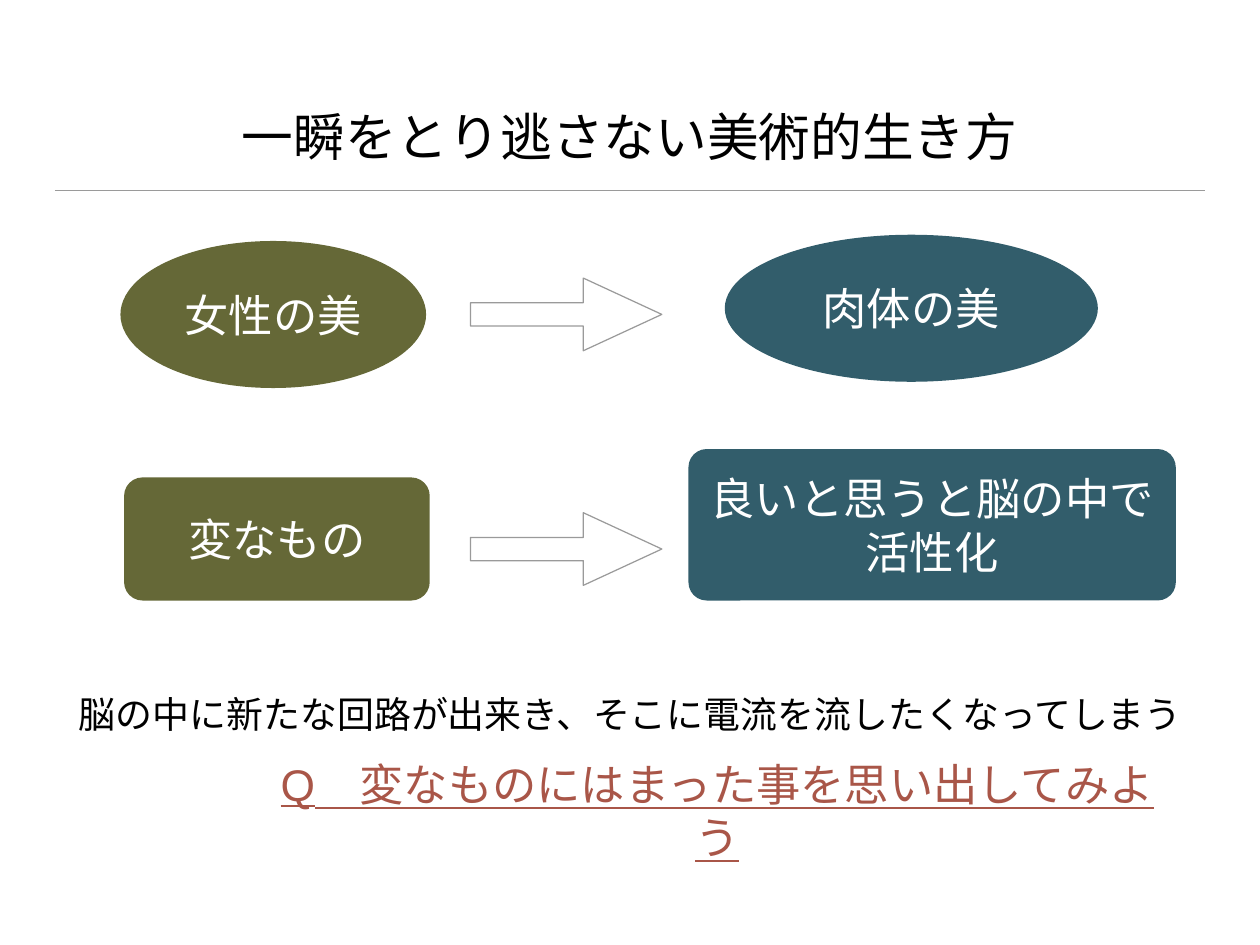
"""Draw the slide on an art-minded way of living, with places in percent of its size."""
from dataclasses import dataclass

from lxml.etree import SubElement
from pptx import Presentation
from pptx.dml.color import RGBColor as Color
from pptx.enum.shapes import MSO_CONNECTOR as Link, MSO_SHAPE as Kind
from pptx.enum.text import MSO_ANCHOR as Anchor, PP_ALIGN as Align
from pptx.oxml.ns import qn
from pptx.util import Inches, Pt

WIDE, HIGH = Inches(14.22), Inches(10.67)


@dataclass(frozen=True)
class Theme:
    font: str = "Arial"
    ink: str = "000000"
    pale: str = "FFFFFF"
    rule: str = "9A9A9A"
    olive: str = "656837"
    teal: str = "325D6B"
    brick: str = "A95648"
    title: int = 42
    large: int = 36
    note: int = 30
    line: int = 1
    inset: float = 0.06


@dataclass(frozen=True)
class Box:
    left: float
    top: float
    width: float
    height: float

    def place(self) -> tuple[int, int, int, int]:
        return (across(self.left), down(self.top),
                across(self.width), down(self.height))


@dataclass(frozen=True)
class Node:
    text: str
    kind: Kind
    box: Box
    fill: str
    round: float | None = None


@dataclass(frozen=True)
class Note:
    text: str
    box: Box
    size: int
    color: str
    anchor: Anchor = Anchor.MIDDLE
    inset: float = 0.06
    wrap: bool = True
    under: bool = False


THEME = Theme()

NODES = (
    Node("女性の美", Kind.OVAL, Box(9.56, 25.5, 24.26, 15.56), THEME.olive),
    Node("肉体の美", Kind.OVAL, Box(57.52, 24.84, 29.61, 15.56), THEME.teal),
    Node("変なもの", Kind.ROUNDED_RECTANGLE,
         Box(9.85, 50.52, 24.26, 13.03), THEME.olive, 0.15),
    Node("良いと思うと脳の中で活性化", Kind.ROUNDED_RECTANGLE,
         Box(54.64, 47.52, 38.68, 16.03), THEME.teal, 0.12),
)

NOTES = (
    Note("一瞬をとり逃さない美術的生き方", Box(4.36, 3.37, 91.21, 14.34),
         THEME.title, THEME.ink, anchor=Anchor.BOTTOM, inset=0),
    Note("脳の中に新たな回路が出来き、そこに電流を流したくなってしまう",
         Box(5.7, 73.01, 88.68, 4.97), THEME.note, THEME.ink, wrap=False),
    Note("Q　変なものにはまった事を思い出してみよう",
         Box(20.11, 82.38, 73.63, 6.75), THEME.large, THEME.brick, under=True),
)

ROWS = (29.43, 54.26)


def across(share: float) -> int:
    return round(WIDE * share / 100)


def down(share: float) -> int:
    return round(HIGH * share / 100)


def write(shape, text: str, *, size: int, color: str,
          anchor: Anchor = Anchor.MIDDLE, inset: float = THEME.inset,
          wrap: bool = True, under: bool = False) -> None:
    frame = shape.text_frame
    frame.word_wrap = wrap
    frame.vertical_anchor = anchor
    frame.margin_left = frame.margin_right = Inches(inset)
    frame.margin_top = frame.margin_bottom = Inches(inset)
    para = frame.paragraphs[0]
    para.alignment = Align.CENTER
    run = para.add_run()
    run.text = text
    run.font.name = THEME.font
    run.font.size = Pt(size)
    run.font.underline = under
    run.font.color.rgb = Color.from_string(color)


def stroke(line) -> None:
    line.color.rgb = Color.from_string(THEME.rule)
    line.width = Pt(THEME.line)


def add_node(slide, node: Node) -> None:
    shape = slide.shapes.add_shape(node.kind, *node.box.place())
    shape.shadow.inherit = False
    shape.fill.solid()
    shape.fill.fore_color.rgb = Color.from_string(node.fill)
    shape.line.fill.background()
    if node.round is not None:
        shape.adjustments[0] = node.round
    write(shape, node.text, size=THEME.large, color=THEME.pale)


def add_arrow(slide, top: float) -> None:
    box = Box(37.34, top, 15.19, 7.69)
    shape = slide.shapes.add_shape(Kind.RIGHT_ARROW, *box.place())
    shape.shadow.inherit = False
    shape.fill.background()
    stroke(shape.line)
    shape.adjustments[0] = 0.32
    shape.adjustments[1] = 1.08


def add_note(slide, note: Note) -> None:
    shape = slide.shapes.add_textbox(*note.box.place())
    write(shape, note.text, size=note.size, color=note.color,
          anchor=note.anchor, inset=note.inset, wrap=note.wrap,
          under=note.under)


def add_rule(slide) -> None:
    level = down(20.15)
    rule = slide.shapes.add_connector(
        Link.STRAIGHT, across(4.36), level, across(95.64), level)
    stroke(rule.line)
    SubElement(rule.element.spPr, qn("a:effectLst"))


def main() -> None:
    deck = Presentation()
    deck.slide_width, deck.slide_height = WIDE, HIGH
    slide = deck.slides.add_slide(deck.slide_layouts[6])
    add_rule(slide)
    for node in NODES:
        add_node(slide, node)
    for top in ROWS:
        add_arrow(slide, top)
    for note in NOTES:
        add_note(slide, note)
    deck.save("out.pptx")


if __name__ == "__main__":
    main()
